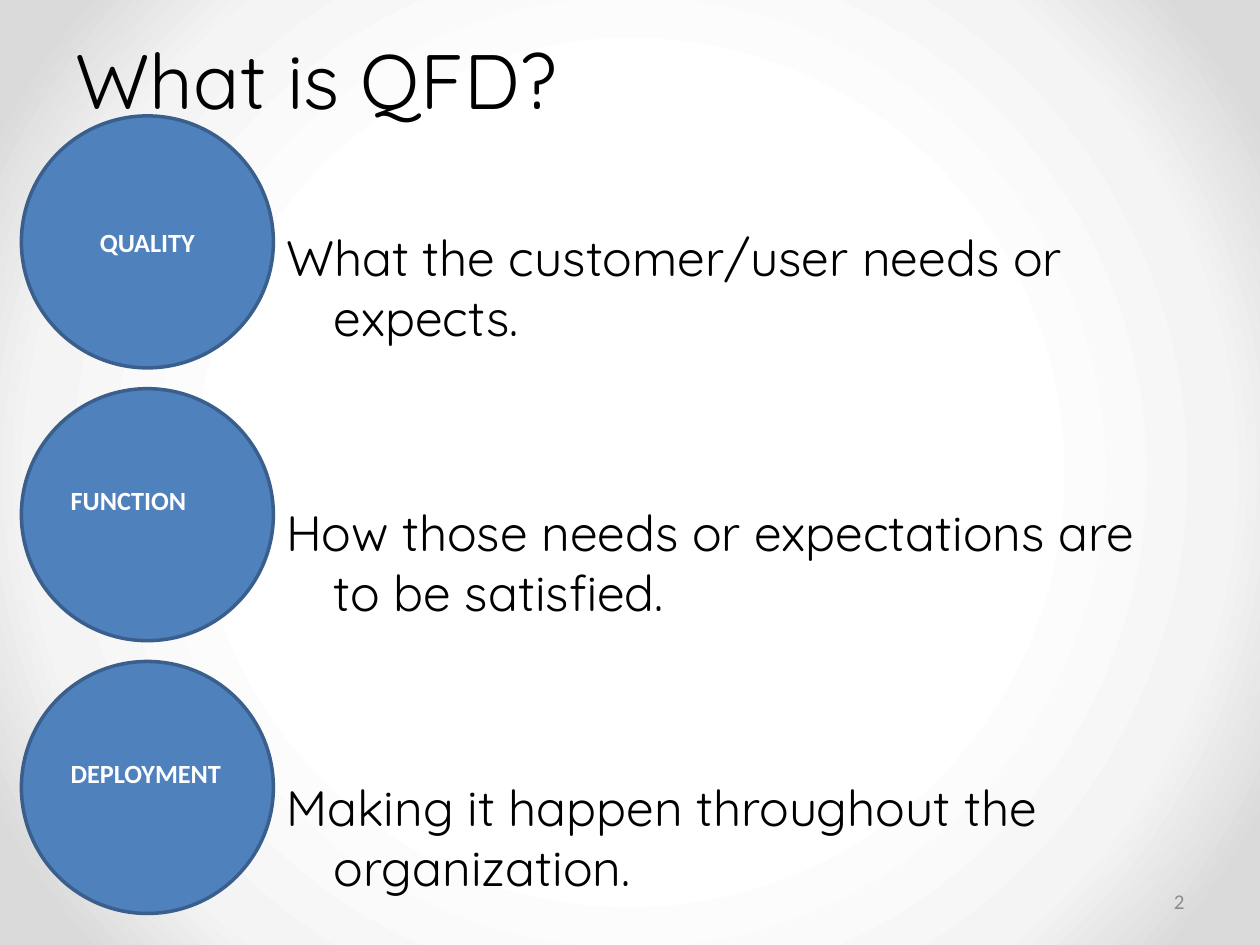
from dataclasses import dataclass

from pptx import Presentation
from pptx.dml.color import RGBColor
from pptx.enum.shapes import MSO_SHAPE as Shape
from pptx.enum.text import MSO_ANCHOR as Anchor, MSO_AUTO_SIZE as AutoSize, PP_ALIGN as Align
from pptx.oxml import parse_xml
from pptx.oxml.ns import nsdecls
from pptx.util import Inches, Pt

WIDTH, HEIGHT = 10, 7.5
CIRCLE_LEFT, CIRCLE_SIZE = 0.17, 2
CIRCLE_TOP, CIRCLE_PITCH = 0.92, 2.165
HEADING_FONT, LABEL_FONT = "Quicksand", "Calibri"
BACKDROP = ((50, "FFFFFF"), (76, "F4F4F4"), (92, "DADADA"))


@dataclass
class Term:
    label: str
    meaning: str
    align: Align = Align.LEFT
    bottom_inset: float = 0.28  # lifts the label above the middle


TERMS = [
    Term("QUALITY", "What the customer/user needs or expects.", Align.CENTER, 0.05),
    Term("FUNCTION", "How those needs or expectations are to be satisfied."),
    Term("DEPLOYMENT", "Making it happen throughout the organization."),
]


def color(value: str) -> RGBColor:
    return RGBColor.from_string(value)


def place(box, left: float, top: float, width: float, height: float) -> None:
    box.left, box.top = Inches(left), Inches(top)
    box.width, box.height = Inches(width), Inches(height)


def write(para, text: str, font: str, size: float, ink: str, align=Align.LEFT, bold=False) -> None:
    para.text = text
    para.alignment = align
    for span in para.runs:
        span.font.name, span.font.size, span.font.bold = font, Pt(size), bold
        span.font.color.rgb = color(ink)


def paint_background(page) -> None:
    """Radial gradient, light in the middle."""
    fill = page.background.fill
    fill.gradient()
    stops = "".join(f'<a:gs pos="{share * 1000}"><a:srgbClr val="{tone}"/></a:gs>'
                    for share, tone in BACKDROP)
    radial = parse_xml(
        f'<a:gradFill {nsdecls("a")} rotWithShape="1"><a:gsLst>{stops}</a:gsLst><a:path path="circle">'
        '<a:fillToRect l="50000" t="50000" r="50000" b="50000"/></a:path></a:gradFill>')
    properties = page.background._cSld.bg.bgPr
    properties.replace(properties.eg_fillProperties, radial)


def add_title(page, text: str) -> None:
    title = page.shapes.title
    place(title, 0.5, 0, 9, 1.25)
    title.text_frame.vertical_anchor = Anchor.MIDDLE
    write(title.text_frame.paragraphs[0], text, HEADING_FONT, 44, "000000")


def add_meanings(page, terms: list[Term]) -> None:
    body = page.placeholders[1]
    place(body, CIRCLE_LEFT + CIRCLE_SIZE, 1.75, 7.33, 5.5)
    frame = body.text_frame
    frame.auto_size = AutoSize.NONE
    for row, term in enumerate(terms):
        para = frame.add_paragraph() if row else frame.paragraphs[0]
        write(para, term.meaning, HEADING_FONT, 28.4, "000000")
        para.space_before = Pt(89 if row else 0)
        # Hanging indent without a bullet
        properties = para._p.get_or_add_pPr()
        properties.set("marL", str(Inches(0.38)))
        properties.set("indent", str(-Inches(0.38)))
        properties.append(parse_xml(f'<a:buNone {nsdecls("a")}/>'))


def add_circle(page, row: int, term: Term) -> None:
    top = CIRCLE_TOP + row * CIRCLE_PITCH
    circle = page.shapes.add_shape(Shape.OVAL, Inches(CIRCLE_LEFT), Inches(top),
                                   Inches(CIRCLE_SIZE), Inches(CIRCLE_SIZE))
    circle.shadow.inherit = False
    circle.fill.solid()
    circle.fill.fore_color.rgb = color("4F81BD")
    circle.line.color.rgb = color("3A5F8C")
    circle.line.width = Pt(2)
    frame = circle.text_frame
    frame.vertical_anchor = Anchor.MIDDLE
    frame.margin_bottom = Inches(term.bottom_inset)
    write(frame.paragraphs[0], term.label, LABEL_FONT, 15, "FFFFFF", term.align, bold=True)


def add_page_number(page, number: str) -> None:
    box = page.shapes.add_textbox(Inches(7.17), Inches(6.95), Inches(2.33), Inches(0.4))
    box.text_frame.word_wrap = True
    box.text_frame.vertical_anchor = Anchor.MIDDLE
    write(box.text_frame.paragraphs[0], number, LABEL_FONT, 12, "8C8C8C", Align.RIGHT)


def main() -> None:
    deck = Presentation()
    deck.slide_width, deck.slide_height = Inches(WIDTH), Inches(HEIGHT)
    page = deck.slides.add_slide(deck.slide_layouts[1])
    paint_background(page)
    add_title(page, "What is QFD?")
    add_meanings(page, TERMS)
    for row, term in enumerate(TERMS):
        add_circle(page, row, term)
    add_page_number(page, "2")
    deck.save("out.pptx")


if __name__ == "__main__":
    main()
